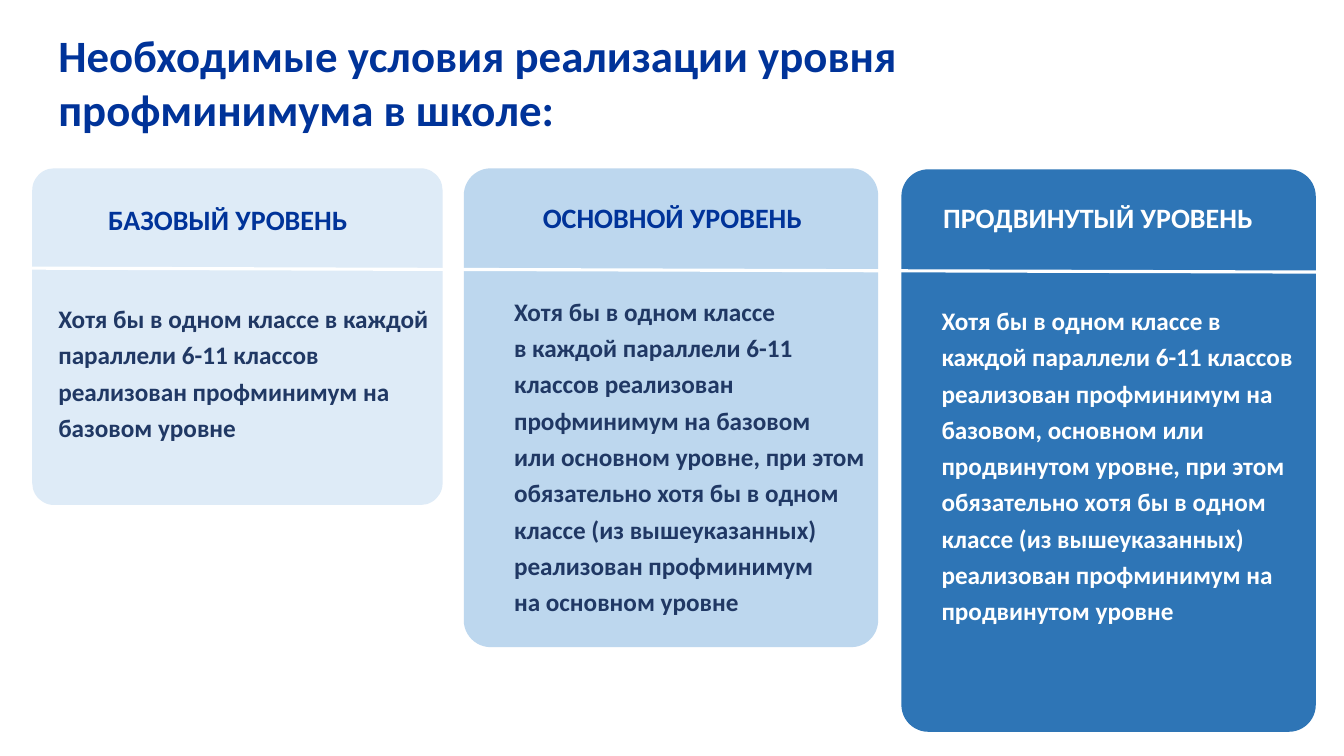
from dataclasses import dataclass
from lxml.etree import SubElement
from pptx import Presentation
from pptx.dml.color import RGBColor
from pptx.enum.shapes import MSO_CONNECTOR, MSO_SHAPE
from pptx.enum.text import MSO_AUTO_SIZE, PP_ALIGN
from pptx.oxml.ns import qn
from pptx.slide import Slide
from pptx.util import Inches, Pt

WHITE = RGBColor(0xFF, 0xFF, 0xFF)
BLUE = RGBColor(0x00, 0x33, 0x99)
NAVY = RGBColor(0x20, 0x38, 0x64)
PALE = RGBColor(0xDE, 0xEB, 0xF7)
LIGHT = RGBColor(0xBD, 0xD7, 0xEE)
DEEP = RGBColor(0x2E, 0x75, 0xB6)


@dataclass(frozen=True)
class Box:
    left: float
    top: float
    width: float
    height: float

    def lengths(self) -> list[Inches]:
        return [Inches(n) for n in (self.left, self.top, self.width, self.height)]


@dataclass(frozen=True)
class Text:
    box: Box
    lines: tuple[str, ...]
    size: int
    color: RGBColor
    pitch: float = 1.0
    after: int = 0
    align: PP_ALIGN = PP_ALIGN.LEFT
    wrap: bool = True


@dataclass(frozen=True)
class Level:
    card: Box
    fill: RGBColor
    head: Text
    body: Text


def make_head(box: Box, name: str, color: RGBColor) -> Text:
    return Text(box, (name,), 20, color, 1.14, align=PP_ALIGN.CENTER, wrap=False)


def make_body(box: Box, color: RGBColor, *lines: str, after: int = 0) -> Text:
    return Text(box, lines, 18, color, 1.2, after)


TITLE = Text(
    Box(0.48, 0.23, 12.14, 1.18),
    ("Необходимые условия реализации уровня", "профминимума в школе:"),
    32,
    BLUE,
)

LEVELS = (
    Level(
        Box(0.32, 1.67, 4.07, 3.34),
        PALE,
        make_head(Box(0.96, 1.91, 2.6, 0.46), "БАЗОВЫЙ УРОВЕНЬ", BLUE),
        make_body(
            Box(0.48, 2.9, 3.92, 1.53),
            NAVY,
            "Хотя бы в одном классе в каждой параллели 6-11 классов "
            "реализован профминимум на базовом уровне",
            after=12,
        ),
    ),
    Level(
        Box(4.6, 1.67, 4.11, 4.75),
        LIGHT,
        make_head(Box(5.27, 1.89, 2.8, 0.46), "ОСНОВНОЙ УРОВЕНЬ", BLUE),
        make_body(
            Box(5, 2.83, 3.92, 3.35),
            NAVY,
            "Хотя бы в одном классе",
            "в каждой параллели 6-11",
            "классов реализован",
            "профминимум на базовом",
            "или основном уровне, при этом",
            "обязательно хотя бы в одном",
            "классе (из вышеуказанных)",
            "реализован профминимум",
            "на основном уровне",
        ),
    ),
    Level(
        Box(8.94, 1.68, 4.11, 5.58),
        DEEP,
        make_head(Box(9.24, 1.89, 3.3, 0.46), "ПРОДВИНУТЫЙ УРОВЕНЬ", WHITE),
        make_body(
            Box(9.24, 2.92, 3.77, 3.35),
            WHITE,
            "Хотя бы в одном классе в каждой параллели 6-11 классов "
            "реализован профминимум на базовом, основном или продвинутом уровне, "
            "при этом обязательно хотя бы в одном классе (из вышеуказанных)",
            "реализован профминимум на продвинутом уровне",
        ),
    ),
)


def draw_card(slide: Slide, level: Level) -> None:
    card = slide.shapes.add_shape(MSO_SHAPE.ROUNDED_RECTANGLE, *level.card.lengths())
    card.adjustments[0] = 0.065
    card.shadow.inherit = False
    card.fill.solid()
    card.fill.fore_color.rgb = level.fill
    card.line.fill.background()


def draw_text(slide: Slide, text: Text) -> None:
    frame = slide.shapes.add_textbox(*text.box.lengths()).text_frame
    frame.word_wrap = text.wrap
    frame.auto_size = MSO_AUTO_SIZE.SHAPE_TO_FIT_TEXT
    for index, line in enumerate(text.lines):
        para = frame.add_paragraph() if index else frame.paragraphs[0]
        para.alignment = text.align
        para.line_spacing = text.pitch
        para.space_after = Pt(text.after)
        run = para.add_run()
        run.text = line
        run.font.name = "Calibri"
        run.font.size = Pt(text.size)
        run.font.bold = True
        run.font.color.rgb = text.color


def draw_rule(slide: Slide) -> None:
    rule = slide.shapes.add_connector(
        MSO_CONNECTOR.STRAIGHT, Inches(0.23), Inches(2.66), Inches(13.36), Inches(2.7)
    )
    rule.line.color.rgb = WHITE
    rule.line.width = Pt(2.25)
    SubElement(rule.element.spPr, qn("a:effectLst"))


def main() -> None:
    deck = Presentation()
    deck.slide_width = Inches(13.33)
    deck.slide_height = Inches(7.5)
    slide = deck.slides.add_slide(deck.slide_layouts[6])
    for level in LEVELS:
        draw_card(slide, level)
    draw_rule(slide)
    draw_text(slide, TITLE)
    for level in LEVELS:
        draw_text(slide, level.head)
        draw_text(slide, level.body)
    deck.save("out.pptx")


if __name__ == "__main__":
    main()
